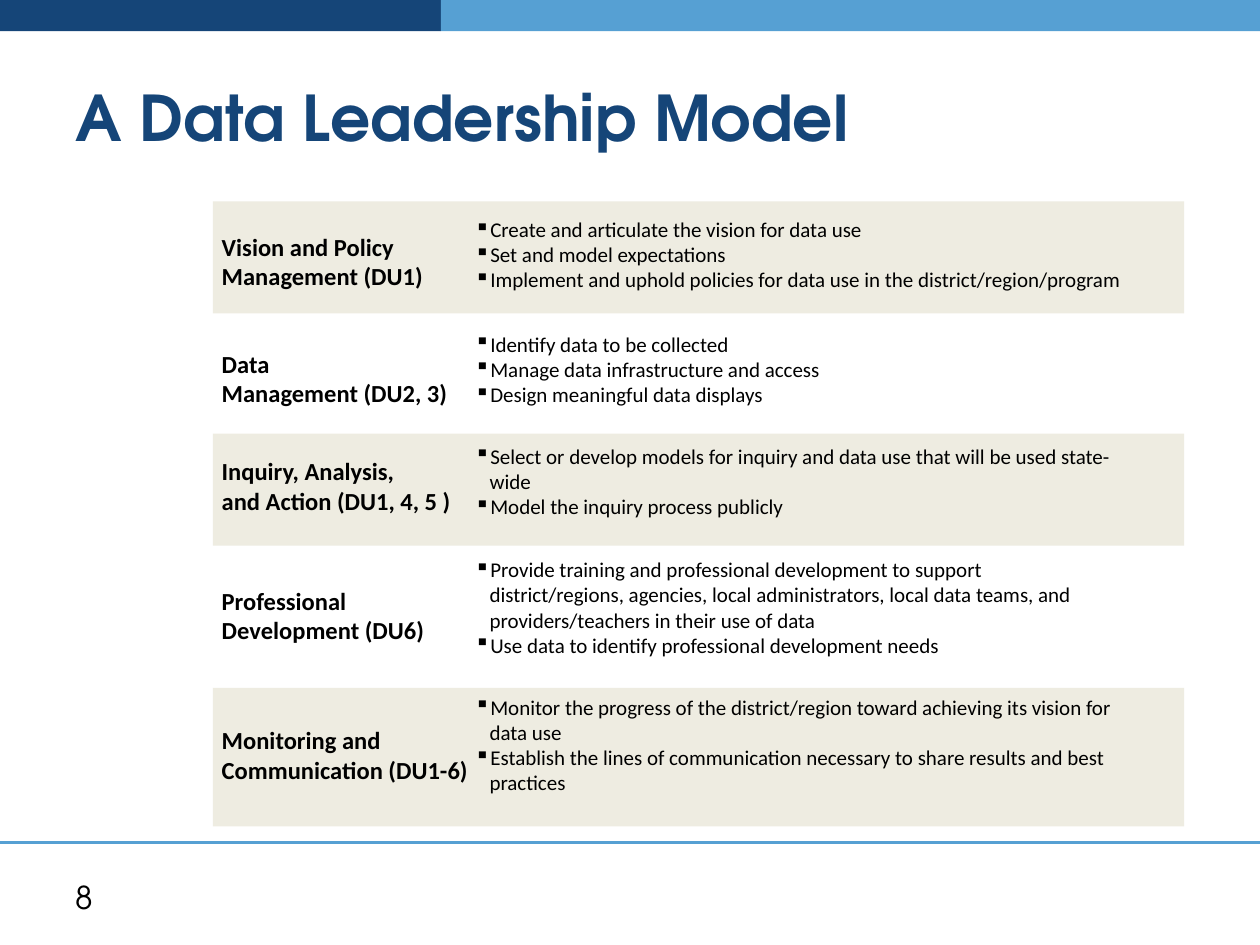
"""Build the slide "A Data Leadership Model": five leadership areas and their tasks."""
from lxml.etree import SubElement
from pptx import Presentation
from pptx.dml.color import RGBColor
from pptx.enum.shapes import MSO_CONNECTOR, MSO_SHAPE
from pptx.enum.text import MSO_ANCHOR as Anchor
from pptx.oxml.ns import qn
from pptx.util import Cm, Pt

COLORS = {"navy": "154578", "sky": "56A0D3", "sand": "EEECE1", "black": "000000"}
HEADING_FONT, BODY_FONT = "TeX Gyre Adventor", "Calibri"

deck = Presentation()
deck.slide_width, deck.slide_height = Cm(25.4), Cm(19.05)
slide = deck.slides.add_slide(deck.slide_layouts[6])


def add_band(left, top, width, height, color):
    band = slide.shapes.add_shape(MSO_SHAPE.RECTANGLE, Cm(left), Cm(top), Cm(width), Cm(height))
    band.shadow.inherit = False
    band.fill.solid()
    band.fill.fore_color.rgb = RGBColor.from_string(COLORS[color])
    band.line.fill.background()


def add_text(left, top, width, height, lines, font, size, color="black", bold=False, anchor=Anchor.TOP):
    frame = slide.shapes.add_textbox(Cm(left), Cm(top), Cm(width), Cm(height)).text_frame
    frame.word_wrap = True
    frame.vertical_anchor = anchor
    frame.text = "\n".join(lines)
    for paragraph in frame.paragraphs:
        for run in paragraph.runs:
            run.font.name, run.font.size, run.font.bold = font, Pt(size), bold
            run.font.color.rgb = RGBColor.from_string(COLORS[color])
    return frame


footer_rule = slide.shapes.add_connector(MSO_CONNECTOR.STRAIGHT, 0, Cm(16.99), deck.slide_width, Cm(16.99))
footer_rule.line.color.rgb = RGBColor.from_string(COLORS["sky"])
footer_rule.line.width = Pt(1.5)
SubElement(footer_rule._element.spPr, qn("a:effectLst"))

add_band(0, 0, 8.89, 0.63, "navy")
add_band(8.89, 0, 16.51, 0.63, "sky")
add_text(1.27, 17.58, 5.92, 1.02, ["8"], HEADING_FONT, 18, anchor=Anchor.MIDDLE)
add_text(1.27, 0.76, 22.86, 3.18, ["A Data Leadership Model"], HEADING_FONT, 36, "navy", True, Anchor.MIDDLE)

for band_top, band_height in [(4.06, 2.26), (8.74, 2.26), (13.87, 2.79)]:
    add_band(4.29, band_top, 19.58, band_height, "sand")

areas = [
    (["Vision and Policy Management (DU1)"], 4.55, 1.65,
     ["Create and articulate the vision for data use",
      "Set and model expectations",
      "Implement and uphold policies for data use in the district/region/program"], 4.24, 14.12, 2.92),
    (["Data", "Management (DU2, 3)"], 6.91, 1.47,
     ["Identify data to be collected",
      "Manage data infrastructure and access",
      "Design meaningful data displays"], 6.55, 14.12, 2.18),
    (["Inquiry, Analysis,", "and Action (DU1, 4, 5 )"], 9.07, 1.47,
     ["Select or develop models for inquiry and data use that will be used state-wide",
      "Model the inquiry process publicly"], 8.81, 14.12, 1.98),
    (["Professional Development (DU6)"], 11.68, 1.55,
     ["Provide training and professional development to support district/regions, agencies, "
      "local administrators, local data teams, and providers/teachers in their use of data",
      "Use data to identify professional development needs"], 11.1, 13.51, 2.67),
    (["Monitoring and Communication (DU1-6)"], 14.5, 2.21,
     ["Monitor the progress of the district/region toward achieving its vision for data use",
      "Establish the lines of communication necessary to share results and best practices"], 13.87, 14.12, 2.79),
]

for area, area_top, area_height, tasks, tasks_top, tasks_width, tasks_height in areas:
    add_text(4.22, area_top, 5.87, area_height, area, BODY_FONT, 14, bold=True)
    task_list = add_text(9.32, tasks_top, tasks_width, tasks_height, tasks, BODY_FONT, 12)
    for task in task_list.paragraphs:
        task.level = 1
        properties = task._p.get_or_add_pPr()
        properties.set("marL", str(Cm(0.3)))
        properties.set("indent", str(-Cm(0.3)))
        SubElement(properties, qn("a:buChar"), char="▪")

deck.save("out.pptx")
